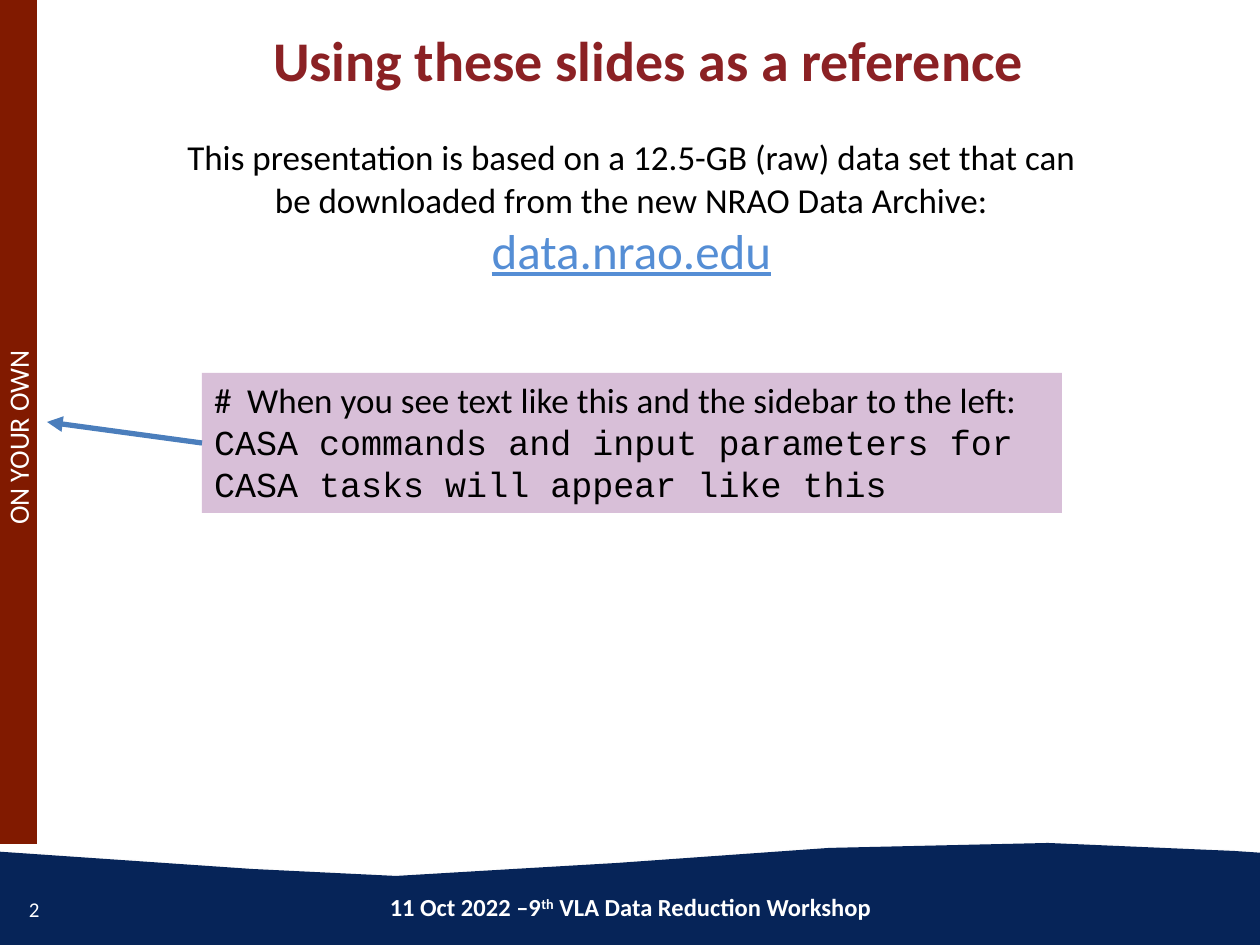
from lxml.etree import SubElement
from pptx import Presentation
from pptx.dml.color import RGBColor
from pptx.enum.shapes import MSO_CONNECTOR as Connector, MSO_SHAPE as Preset
from pptx.enum.text import MSO_ANCHOR as Anchor, PP_ALIGN as Align
from pptx.oxml.ns import qn
from pptx.util import Emu, Pt

PX = 914400 / 126
WIDTH, HEIGHT = 1260, 945

WHITE = RGBColor(0xFF, 0xFF, 0xFF)
BLACK = RGBColor(0x00, 0x00, 0x00)
NAVY = RGBColor(0x06, 0x24, 0x58)
RUST = RGBColor(0x81, 0x1A, 0x00)
CRIMSON = RGBColor(0x8B, 0x21, 0x24)
LINK_BLUE = RGBColor(0x55, 0x8E, 0xD5)
ARROW_BLUE = RGBColor(0x4B, 0x7E, 0xBC)
THISTLE = RGBColor(0xD8, 0xBF, 0xD8)


def px(length):
    return Emu(round(length * PX))


def add_run(paragraph, text, size=20, color=BLACK, font="Calibri", bold=False,
            underline=False, superscript=False):
    run = paragraph.add_run()
    run.text = text
    run.font.name = font
    run.font.size = Pt(size)
    run.font.color.rgb = color
    run.font.bold = bold
    run.font.underline = underline
    if superscript:
        run._r.get_or_add_rPr().set("baseline", "30000")


def write(shape, paragraphs, align=Align.LEFT, margins=(12, 6), **style):
    """Each paragraph is a list of (text, overrides of the shared style)."""
    frame = shape.text_frame
    frame.word_wrap = True
    frame.vertical_anchor = Anchor.TOP
    frame.margin_left = frame.margin_right = px(margins[0])
    frame.margin_top = frame.margin_bottom = px(margins[1])
    for index, runs in enumerate(paragraphs):
        paragraph = frame.add_paragraph() if index else frame.paragraphs[0]
        paragraph.alignment = align
        for text, overrides in runs:
            add_run(paragraph, text, **{**style, **overrides})


def add_text(slide, box, runs, **style):
    shape = slide.shapes.add_textbox(*map(px, box))
    write(shape, [runs], **style)
    return shape


def add_rectangle(slide, box, color):
    shape = slide.shapes.add_shape(Preset.RECTANGLE, *map(px, box))
    shape.shadow.inherit = False
    shape.fill.solid()
    shape.fill.fore_color.rgb = color
    shape.line.fill.background()
    return shape


def add_wave(slide, left, top):
    points = [(0, 8), (263, 26), (407, 33), (525, 26), (628, 20), (840, 5),
              (1059, 0), (1245, 8), (1289, 11), (1287, 115), (2, 112)]
    corners = [(left + x, top + y) for x, y in points]
    builder = slide.shapes.build_freeform(*corners[0], scale=PX)
    builder.add_line_segments(corners[1:], close=True)
    wave = builder.convert_to_shape()
    wave.fill.solid()
    wave.fill.fore_color.rgb = NAVY
    wave.line.fill.background()
    wave.shadow.inherit = False
    # Soft shadow below the edge
    effects = wave._element.spPr.find(qn("a:effectLst"))
    shadow = SubElement(effects, qn("a:outerShdw"), blurRad=str(Pt(3.1)),
                        dist=str(Pt(1.8)), dir="5400000", rotWithShape="0")
    color = SubElement(shadow, qn("a:srgbClr"), val=str(BLACK))
    SubElement(color, qn("a:alpha"), val="35000")


def add_footer(slide, left, top):
    add_wave(slide, left - 11, top)
    add_text(slide, (left + 29, top + 54, 519, 30), [("2", {})],
             margins=(0, 0), size=12, color=WHITE)
    add_text(slide, (left + 333, top + 43, 595, 53),
             [("11 Oct 2022 –9", {}), ("th", {"superscript": True}),
              (" VLA Data Reduction Workshop", {})],
             align=Align.CENTER, size=14, color=WHITE, bold=True)


def add_sidebar(slide, left, top, width, height):
    add_rectangle(slide, (left, top, width, height), RUST)
    label = add_text(slide, (left - 97, top + 398, 231, 47),
                     [("ON YOUR OWN", {})], size=16, color=WHITE)
    label.rotation = 270


def add_heading(slide, left, top, width):
    add_text(slide, (left, top, width, 72),
             [("Using these slides as a reference", {})],
             align=Align.CENTER, size=32, color=CRIMSON, bold=True)


def add_introduction(slide, left, top, width, height):
    add_text(slide, (left, top, width, height),
             [("This presentation is based on a 12.5-GB (raw) data set that can "
               "be downloaded from the new NRAO Data Archive: ", {}),
              ("data.nrao.edu",
               {"size": 28, "color": LINK_BLUE, "underline": True})],
             align=Align.CENTER)


def add_arrow(slide, start, end):
    arrow = slide.shapes.add_connector(Connector.STRAIGHT,
                                       *map(px, (*start, *end)))
    arrow.line.color.rgb = ARROW_BLUE
    arrow.line.width = Pt(3)
    SubElement(arrow.line._get_or_add_ln(), qn("a:tailEnd"), type="triangle")
    SubElement(arrow._element.spPr, qn("a:effectLst"))


def add_command_sample(slide, left, top, width, height):
    panel = add_rectangle(slide, (left, top, width, height), THISTLE)
    write(panel, [
        [("#  When you see text like this and the sidebar to the left:", {})],
        [("CASA commands and input parameters for CASA tasks will appear "
          "like this", {"font": "Courier New"})],
    ])
    middle = top + height // 2
    add_arrow(slide, (left, middle), (left - 155, middle - 21))


def main():
    presentation = Presentation()
    presentation.slide_width = px(WIDTH)
    presentation.slide_height = px(HEIGHT)
    slide = presentation.slides.add_slide(presentation.slide_layouts[6])
    add_footer(slide, 0, 843)
    add_sidebar(slide, 0, 0, 37, 844)
    add_heading(slide, 37, 20, WIDTH - 37)
    add_introduction(slide, 173, 130, 917, 199)
    add_command_sample(slide, 202, 373, 860, 140)
    presentation.save("out.pptx")


if __name__ == "__main__":
    main()
